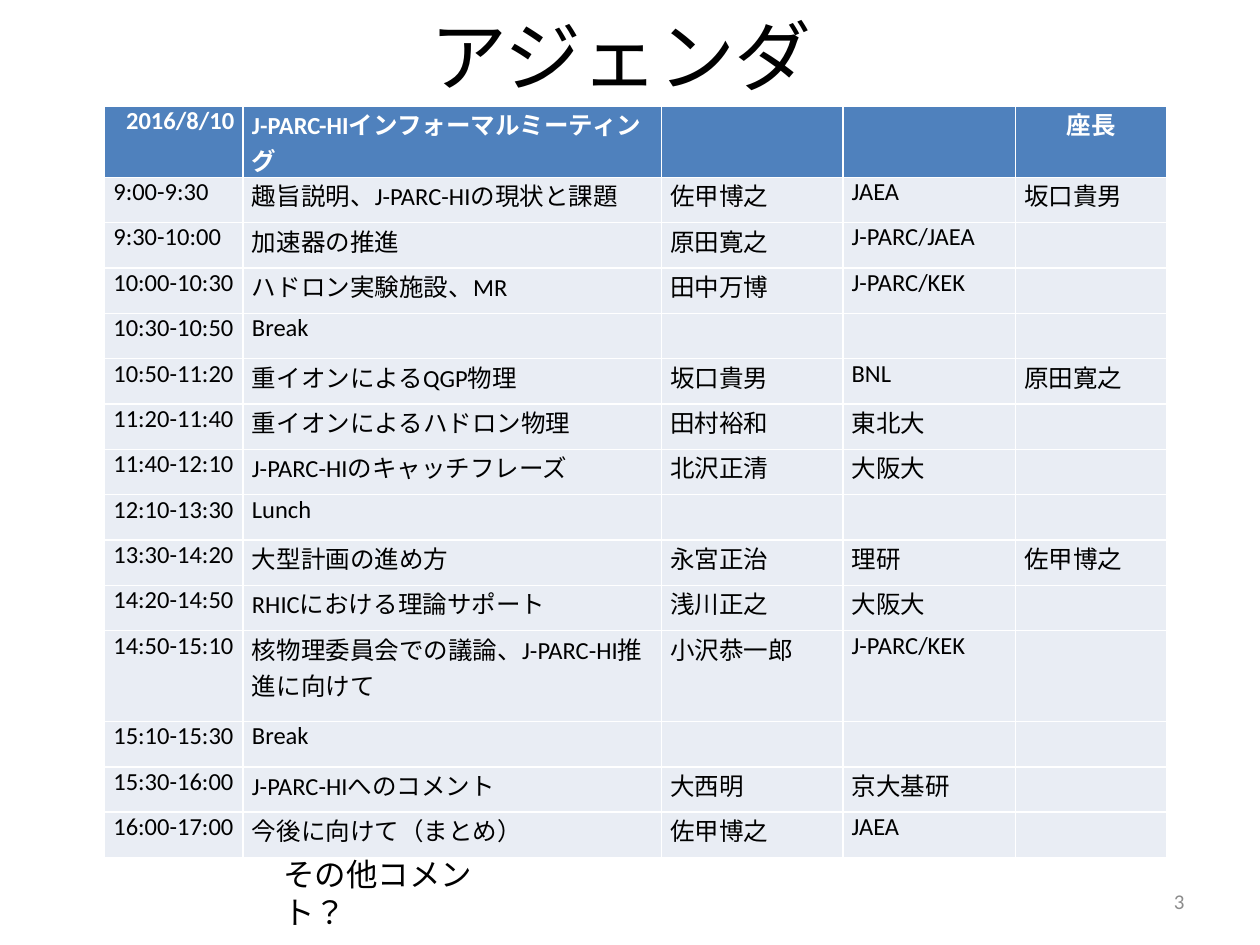
from dataclasses import dataclass

from pptx import Presentation
from pptx.dml.color import RGBColor
from pptx.enum.lang import MSO_LANGUAGE_ID as Language
from pptx.enum.text import MSO_ANCHOR as Anchor, PP_ALIGN as Align
from pptx.util import Inches, Pt

# Content
TITLE = "アジェンダ"
HEADER = ("2016/8/10", "J-PARC-HIインフォーマルミーティング", "", "", "座長")
SESSIONS = [
    ("9:00-9:30", "趣旨説明、J-PARC-HIの現状と課題", "佐甲博之", "JAEA", "坂口貴男"),
    ("9:30-10:00", "加速器の推進", "原田寛之", "J-PARC/JAEA", ""),
    ("10:00-10:30", "ハドロン実験施設、MR", "田中万博", "J-PARC/KEK", ""),
    ("10:30-10:50", "Break", "", "", ""),
    ("10:50-11:20", "重イオンによるQGP物理", "坂口貴男", "BNL", "原田寛之"),
    ("11:20-11:40", "重イオンによるハドロン物理", "田村裕和", "東北大", ""),
    ("11:40-12:10", "J-PARC-HIのキャッチフレーズ", "北沢正清", "大阪大", ""),
    ("12:10-13:30", "Lunch", "", "", ""),
    ("13:30-14:20", "大型計画の進め方", "永宮正治", "理研", "佐甲博之"),
    ("14:20-14:50", "RHICにおける理論サポート", "浅川正之", "大阪大", ""),
    ("14:50-15:10", "核物理委員会での議論、J-PARC-HI推進に向けて", "小沢恭一郎", "J-PARC/KEK", ""),
    ("15:10-15:30", "Break", "", "", ""),
    ("15:30-16:00", "J-PARC-HIへのコメント", "大西明", "京大基研", ""),
    ("16:00-17:00", "今後に向けて（まとめ）", "佐甲博之", "JAEA", ""),
]
COMMENT = "その他コメント？"
PAGE_NUMBER = "3"

# Grid in inches
COLUMNS = (1.1, 3.32, 1.44, 1.37, 1.2)
ROW_HEIGHT = 0.36
TALL_SESSION = "14:50-15:10"
TOPIC_COLUMN = 1
HEADER_ALIGN = {0: Align.RIGHT, 4: Align.CENTER}


@dataclass(frozen=True)
class Theme:
    font: str = "Calibri"
    text: str = "000000"
    muted: str = "8C8C8C"
    header_text: str = "FFFFFF"
    header_fill: str = "4F81BD"
    body_fill: str = "E9EDF4"
    title_size: int = 44
    comment_size: int = 18
    table_size: int = 14
    number_size: int = 12


THEME = Theme()


def set_attributes(target, values):
    for name, value in values.items():
        setattr(target, name, value)


def write(frame, text, size, color, bold=False, **paragraph_format):
    paragraph = frame.paragraphs[0]
    set_attributes(paragraph, paragraph_format)
    run = paragraph.add_run()
    run.text = text
    set_attributes(run.font, {
        "name": THEME.font, "size": Pt(size), "bold": bold,
        "language_id": Language.JAPANESE,
    })
    run.font.color.rgb = RGBColor.from_string(color)


def place(shape, left, top, width, height):
    set_attributes(shape, {
        "left": Inches(left), "top": Inches(top),
        "width": Inches(width), "height": Inches(height),
    })


def add_text(slide, box, text, size, color, anchor=Anchor.TOP, align=Align.LEFT):
    shape = slide.shapes.add_textbox(*map(Inches, box))
    set_attributes(shape.text_frame, {"word_wrap": True, "vertical_anchor": anchor})
    write(shape.text_frame, text, size, color, alignment=align)


def add_agenda(slide, left, top):
    rows = [HEADER, *SESSIONS]
    heights = [ROW_HEIGHT * (2 if row[0] == TALL_SESSION else 1) for row in rows]
    box = (left, top, sum(COLUMNS), sum(heights))
    table = slide.shapes.add_table(len(rows), len(COLUMNS), *map(Inches, box)).table
    table.horz_banding = False
    for column, width in zip(table.columns, COLUMNS):
        column.width = Inches(width)

    for row_index, (row, height) in enumerate(zip(rows, heights)):
        table.rows[row_index].height = Inches(height)
        is_header = row_index == 0
        for column_index, text in enumerate(row):
            cell = table.cell(row_index, column_index)
            set_attributes(cell, {
                "margin_left": Inches(0.07), "margin_right": Inches(0.07),
                "margin_top": 0, "margin_bottom": 0,
            })
            cell.fill.solid()
            cell.fill.fore_color.rgb = RGBColor.from_string(
                THEME.header_fill if is_header else THEME.body_fill)
            if text:
                write(cell.text_frame, text, THEME.table_size,
                      THEME.header_text if is_header else THEME.text, bold=is_header,
                      alignment=HEADER_ALIGN.get(column_index) if is_header else None,
                      space_after=Pt(9 if column_index == TOPIC_COLUMN else 12))


def main():
    presentation = Presentation()
    set_attributes(presentation, {"slide_width": Inches(10), "slide_height": Inches(7.5)})
    slide = presentation.slides.add_slide(presentation.slide_layouts[5])

    # Title
    title = slide.shapes.title
    place(title, 0.43, -0.19, 9, 1.25)
    title.text_frame.vertical_anchor = Anchor.MIDDLE
    write(title.text_frame, TITLE, THEME.title_size, THEME.text, alignment=Align.CENTER)

    # Agenda table
    add_agenda(slide, 0.83, 0.84)

    # Page number and closing comment
    add_text(slide, (7.17, 6.95, 2.33, 0.4), PAGE_NUMBER, THEME.number_size,
             THEME.muted, Anchor.MIDDLE, Align.RIGHT)
    add_text(slide, (2.15, 6.74, 1.96, 0.4), COMMENT, THEME.comment_size, THEME.text)

    presentation.save("out.pptx")


if __name__ == "__main__":
    main()
